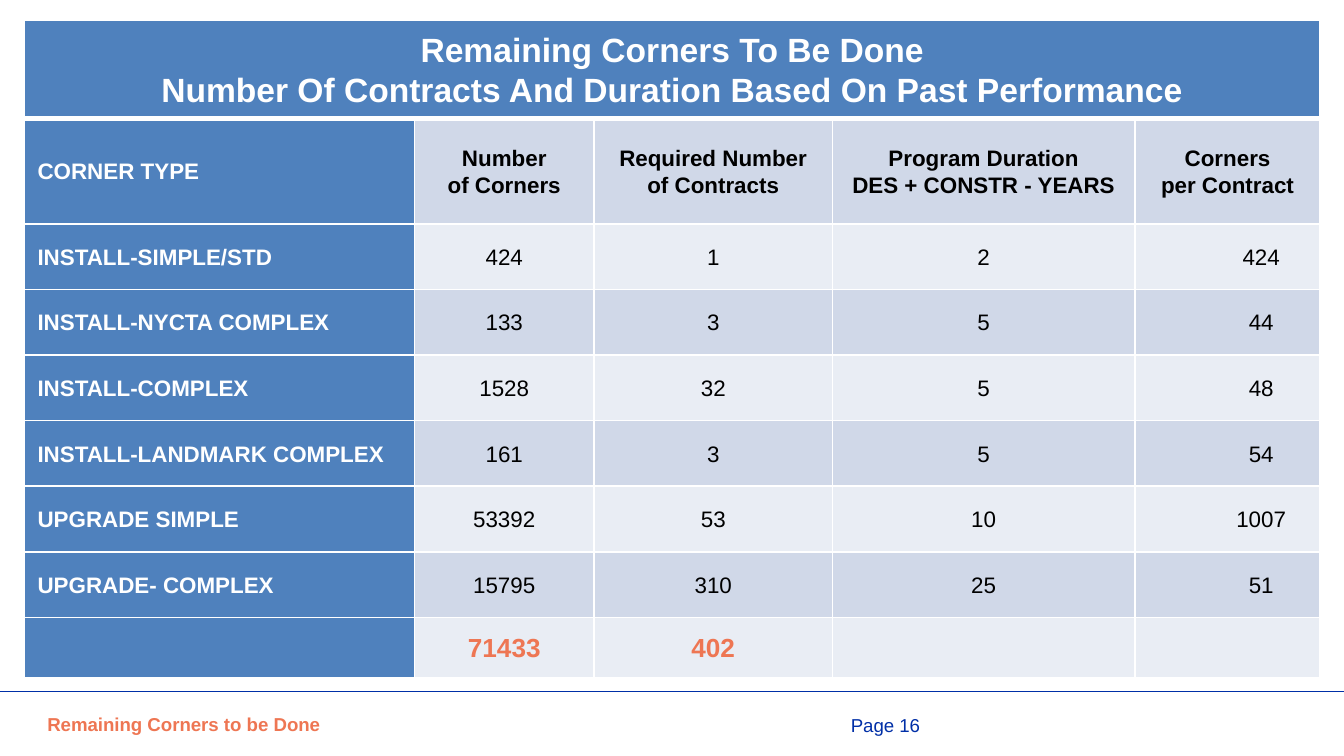
from lxml.etree import SubElement
from pptx import Presentation
from pptx.dml.color import RGBColor
from pptx.enum.shapes import MSO_CONNECTOR
from pptx.enum.text import MSO_ANCHOR, MSO_AUTO_SIZE, PP_ALIGN
from pptx.oxml import parse_xml
from pptx.oxml.ns import nsdecls, qn
from pptx.util import Cm, Pt

BLUE, NAVY, ORANGE = "4F81BD", "002FA7", "EE7653"
WHITE, BLACK = "FFFFFF", "000000"
BANDS = ["E9EDF4", "D0D8E8"]

TITLE = "Remaining Corners To Be Done\nNumber Of Contracts And Duration Based On Past Performance"
HEADERS = [
    "CORNER TYPE",
    "Number\nof Corners",
    "Required Number\nof Contracts",
    "Program Duration\nDES + CONSTR - YEARS",
    "Corners\nper Contract",
]
ROWS = [
    ["INSTALL-SIMPLE/STD", "424", "1", "2", "424"],
    ["INSTALL-NYCTA COMPLEX", "133", "3", "5", "44"],
    ["INSTALL-COMPLEX", "1528", "32", "5", "48"],
    ["INSTALL-LANDMARK COMPLEX", "161", "3", "5", "54"],
    ["UPGRADE SIMPLE", "53392", "53", "10", "1007"],
    ["UPGRADE- COMPLEX", "15795", "310", "25", "51"],
]
TOTALS = ["", "71433", "402", "", ""]
COL_WIDTHS = [7.37, 3.4, 4.5, 5.72, 3.5]
ROW_HEIGHTS = [1.86, 1.99] + [1.24] * len(ROWS) + [1.15]


def rgb(color):
    return RGBColor.from_string(color)


def put_text(tf, text, size=12, color=BLACK, bold=False, align=PP_ALIGN.LEFT,
             spacing=None, indent=0):
    for i, line in enumerate(text.split("\n")):
        p = tf.paragraphs[0] if i == 0 else tf.add_paragraph()
        p.alignment = align
        if spacing:
            p.line_spacing = spacing
        if indent:
            p.level = 1
            pPr = p._p.get_or_add_pPr()
            pPr.set("marL", str(Cm(indent)))
            pPr.set("indent", "0")
        r = p.add_run()
        r.text = line
        r.font.name = "Arial"
        r.font.size = Pt(size)
        r.font.bold = bold
        r.font.color.rgb = rgb(color)


class SlideBuilder:
    def __init__(self, prs):
        self.s = prs.slides.add_slide(prs.slide_layouts[5])

    def title(self, text, x, y, w, h):
        sp = self.s.shapes.title
        sp.left, sp.top, sp.width, sp.height = Cm(x), Cm(y), Cm(w), Cm(h)
        tf = sp.text_frame
        tf.word_wrap = True
        tf.auto_size = MSO_AUTO_SIZE.NONE
        tf.vertical_anchor = MSO_ANCHOR.TOP
        put_text(tf, text, size=10, color=ORANGE, bold=True)

    def text_box(self, text, x, y, w, h, **fmt):
        tf = self.s.shapes.add_textbox(Cm(x), Cm(y), Cm(w), Cm(h)).text_frame
        tf.margin_left = tf.margin_right = tf.margin_top = tf.margin_bottom = 0
        tf.word_wrap = False
        tf.auto_size = MSO_AUTO_SIZE.SHAPE_TO_FIT_TEXT
        put_text(tf, text, **fmt)

    def line(self, x1, y1, x2, y2, color, width):
        cx = self.s.shapes.add_connector(
            MSO_CONNECTOR.STRAIGHT, Cm(x1), Cm(y1), Cm(x2), Cm(y2))
        cx.line.color.rgb = rgb(color)
        cx.line.width = Pt(width)
        SubElement(cx._element.spPr, qn("a:effectLst"))

    def table(self, x, y, widths, heights):
        table = self.s.shapes.add_table(
            len(heights), len(widths), Cm(x), Cm(y),
            Cm(sum(widths)), Cm(sum(heights))).table
        table.first_row = table.horz_banding = False
        for col, width in zip(table.columns, widths):
            col.width = Cm(width)
        for row, height in zip(table.rows, heights):
            row.height = Cm(height)
        return table

    def cell(self, cell, text, fill, top=1, bottom=1, left=0.15, **fmt):
        cell.fill.solid()
        cell.fill.fore_color.rgb = rgb(fill)
        cell.vertical_anchor = MSO_ANCHOR.MIDDLE
        cell.margin_left, cell.margin_right = Cm(left), Cm(0.15)
        cell.margin_top = cell.margin_bottom = 0
        tcPr = cell._tc.get_or_add_tcPr()
        for i, (side, width) in enumerate(zip("LRTB", (1, 1, top, bottom))):
            tcPr.insert(i, parse_xml(
                f'<a:ln{side} {nsdecls("a")} w="{Pt(width)}"><a:solidFill>'
                f'<a:srgbClr val="{WHITE}"/></a:solidFill></a:ln{side}>'))
        if text:
            put_text(cell.text_frame, text, spacing=1.07, **fmt)


def main():
    prs = Presentation()
    prs.slide_width, prs.slide_height = Cm(25.4), Cm(14.29)
    b = SlideBuilder(prs)
    b.title("Remaining Corners to be Done", 0.64, 13.34, 11.43, 0.79)
    b.line(0, 13.07, 25.4, 13.07, NAVY, 0.75)
    b.text_box("Page 16", 16.08, 13.49, 1.37, 0.43, size=10, color=NAVY)

    table = b.table(0.46, 0.38, COL_WIDTHS, ROW_HEIGHTS)
    last_col = len(COL_WIDTHS) - 1
    table.cell(0, 0).merge(table.cell(0, last_col))
    for c in range(len(COL_WIDTHS)):
        b.cell(table.cell(0, c), "" if c else TITLE, BLUE, bottom=3,
               size=18, color=WHITE, bold=True, align=PP_ALIGN.CENTER)

    body = [HEADERS] + ROWS + [TOTALS]
    for r, values in enumerate(body, start=1):
        header, total = r == 1, r == len(body)
        for c, value in enumerate(values):
            cell = table.cell(r, c)
            top = 3 if header else 1
            if c == 0:
                b.cell(cell, value, BLUE, top=top, left=0.25,
                       color=WHITE, bold=True)
            else:
                b.cell(cell, value, BANDS[r % 2], top=top,
                       size=14 if total else 12,
                       color=ORANGE if total else BLACK,
                       bold=header or total, align=PP_ALIGN.CENTER,
                       indent=1.27 if c == last_col and not header else 0)
    prs.save("out.pptx")


if __name__ == "__main__":
    main()
